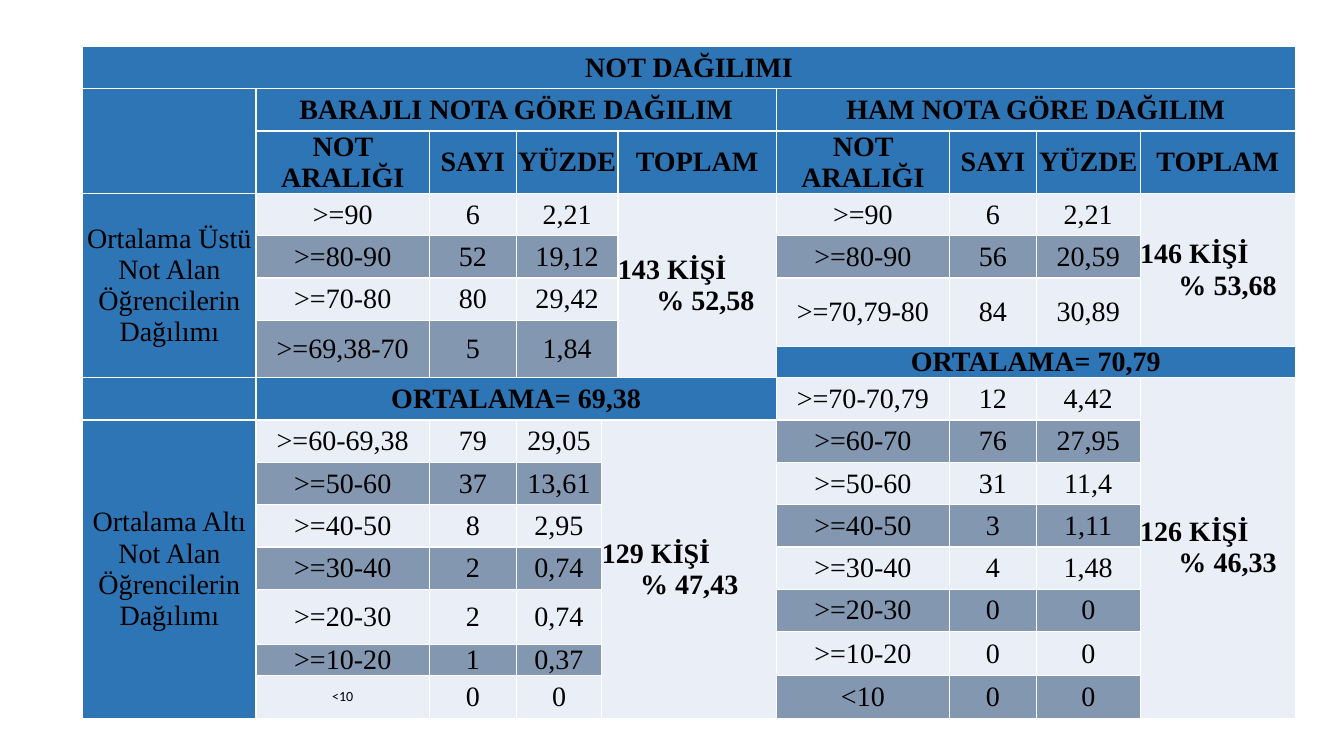
from dataclasses import dataclass

from lxml.etree import SubElement
from pptx import Presentation
from pptx.dml.color import RGBColor
from pptx.enum.text import MSO_ANCHOR, PP_ALIGN
from pptx.oxml.ns import qn
from pptx.util import Inches, Pt


@dataclass(frozen=True)
class Theme:
    header: str = "2E75B6"
    light: str = "EAEFF7"
    dark: str = "8497B0"
    ink: str = "000000"
    border: str = "FFFFFF"
    border_width: float = 1
    font: str = "Times New Roman"
    small_font: str = "Calibri"
    size: float = 20
    small_size: float = 10
    hanging: float = 0.38


@dataclass(frozen=True)
class GradeBlock:
    """Grade ranges with their total; the range at index tall fills two rows."""
    row: int
    col: int
    percent_cols: int
    last_col: int
    tall: int
    total: str
    grades: tuple


THEME = Theme()
COLUMN_WIDTHS = [1.72, 1.72, 0.86, 0.85, 0.16, 1.57, 1.72, 0.86, 1.03, 1.54]
ROW_HEIGHTS = [0.42, 0.42, 0.62, 0.42, 0.42, 0.42, 0.26, 0.31] + [0.42] * 6 + [0.13, 0.29, 0.42]

# text, row, column, row span, column span
HEADINGS = [
    ("NOT DAĞILIMI", 0, 0, 1, 10),
    ("", 1, 0, 2, 1),
    ("BARAJLI NOTA GÖRE DAĞILIM", 1, 1, 1, 5),
    ("HAM NOTA GÖRE DAĞILIM", 1, 6, 1, 4),
    ("ORTALAMA= 70,79", 7, 6, 1, 4),
    ("", 8, 0, 1, 1),
    ("ORTALAMA= 69,38", 8, 1, 1, 5),
]
GROUPS = [
    ("Ortalama Üstü Not Alan Öğrencilerin Dağılımı", 3, 0, 5, 1),
    ("Ortalama Altı Not Alan Öğrencilerin Dağılımı", 9, 0, 8, 1),
]
COLUMN_LABELS = ["NOT ARALIĞI", "SAYI", "YÜZDE", "TOPLAM"]
LABEL_SPANS = {1: [1, 1, 2, 1], 6: [1, 1, 1, 1]}

BLOCKS = [
    GradeBlock(3, 1, 2, 5, 3, "143 KİŞİ\v% 52,58", (
        (">=90", "6", "2,21"), (">=80-90", "52", "19,12"),
        (">=70-80", "80", "29,42"), (">=69,38-70", "5", "1,84"))),
    GradeBlock(9, 1, 1, 5, 4, "129 KİŞİ\v% 47,43", (
        (">=60-69,38", "79", "29,05"), (">=50-60", "37", "13,61"),
        (">=40-50", "8", "2,95"), (">=30-40", "2", "0,74"),
        (">=20-30", "2", "0,74"), (">=10-20", "1", "0,37"), ("<10", "0", "0"))),
    GradeBlock(3, 6, 1, 9, 2, "146 KİŞİ\v% 53,68", (
        (">=90", "6", "2,21"), (">=80-90", "56", "20,59"),
        (">=70,79-80", "84", "30,89"))),
    GradeBlock(8, 6, 1, 9, 6, "126 KİŞİ\v% 46,33", (
        (">=70-70,79", "12", "4,42"), (">=60-70", "76", "27,95"),
        (">=50-60", "31", "11,4"), (">=40-50", "3", "1,11"),
        (">=30-40", "4", "1,48"), (">=20-30", "0", "0"),
        (">=10-20", "0", "0"), ("<10", "0", "0"))),
]


def write(frame, text, *, size=THEME.size, font=THEME.font, bold=False,
          align=PP_ALIGN.CENTER, hanging=0):
    paragraph = frame.paragraphs[0]
    paragraph.text = text
    paragraph.alignment = align
    if hanging:
        properties = paragraph._p.get_or_add_pPr()
        properties.set("marL", str(Inches(hanging)))
        properties.set("indent", str(-Inches(hanging)))
    for run in paragraph.runs:
        run.font.size = Pt(size)
        run.font.name = font
        run.font.bold = bold
        run.font.color.rgb = RGBColor.from_string(THEME.ink)


class GradeSlide:
    def __init__(self, deck, theme):
        self.theme = theme
        self.slide = deck.slides.add_slide(deck.slide_layouts[6])

    def add_grid(self, left, top, widths, heights):
        self.grid = self.slide.shapes.add_table(
            len(heights), len(widths), Inches(left), Inches(top),
            Inches(sum(widths)), Inches(sum(heights))).table
        for column, width in zip(self.grid.columns, widths):
            column.width = Inches(width)
        for row, height in zip(self.grid.rows, heights):
            row.height = Inches(height)
        for cell in self.grid.iter_cells():
            cell.margin_left = cell.margin_right = cell.margin_top = cell.margin_bottom = 0
            cell.vertical_anchor = MSO_ANCHOR.MIDDLE
            self.outline(cell)

    def outline(self, cell):
        for side in ("lnL", "lnR", "lnT", "lnB"):
            line = SubElement(cell._tc.get_or_add_tcPr(), qn(f"a:{side}"),
                              w=str(Pt(self.theme.border_width)))
            fill = SubElement(line, qn("a:solidFill"))
            SubElement(fill, qn("a:srgbClr"), val=self.theme.border)

    def add_cell(self, text, row, col, row_span=1, col_span=1, *, fill, **text_format):
        cell = self.grid.cell(row, col)
        if row_span * col_span > 1:
            cell.merge(self.grid.cell(row + row_span - 1, col + col_span - 1))
        cell.fill.solid()
        cell.fill.fore_color.rgb = RGBColor.from_string(fill)
        write(cell.text_frame, text, **text_format)

    def add_column_labels(self, row, col, spans):
        for label, span in zip(COLUMN_LABELS, spans):
            self.add_cell(label, row, col, 1, span, fill=self.theme.header, bold=True)
            col += span

    def add_block(self, block):
        row = block.row
        for index, (grade, count, percent) in enumerate(block.grades):
            depth = 2 if index == block.tall else 1
            fill = self.theme.dark if index % 2 else self.theme.light
            is_small = grade == "<10" and block.col == 1
            grade_format = ({"size": self.theme.small_size, "font": self.theme.small_font}
                            if is_small else {})
            self.add_cell(grade, row, block.col, depth, fill=fill, **grade_format)
            self.add_cell(count, row, block.col + 1, depth, fill=fill)
            self.add_cell(percent, row, block.col + 2, depth, block.percent_cols, fill=fill)
            row += depth
        total_col = block.col + 2 + block.percent_cols
        self.add_cell(block.total, block.row, total_col, row - block.row,
                      block.last_col - total_col + 1, fill=self.theme.light, bold=True,
                      align=PP_ALIGN.LEFT, hanging=self.theme.hanging)


def main():
    deck = Presentation()
    deck.slide_width, deck.slide_height = Inches(13.33), Inches(7.5)
    page = GradeSlide(deck, THEME)
    page.add_grid(0.82, 0.46, COLUMN_WIDTHS, ROW_HEIGHTS)
    for heading in HEADINGS:
        page.add_cell(*heading, fill=THEME.header, bold=True)
    for group in GROUPS:
        page.add_cell(*group, fill=THEME.header)
    for col, spans in LABEL_SPANS.items():
        page.add_column_labels(2, col, spans)
    for block in BLOCKS:
        page.add_block(block)
    deck.save("out.pptx")


if __name__ == "__main__":
    main()
